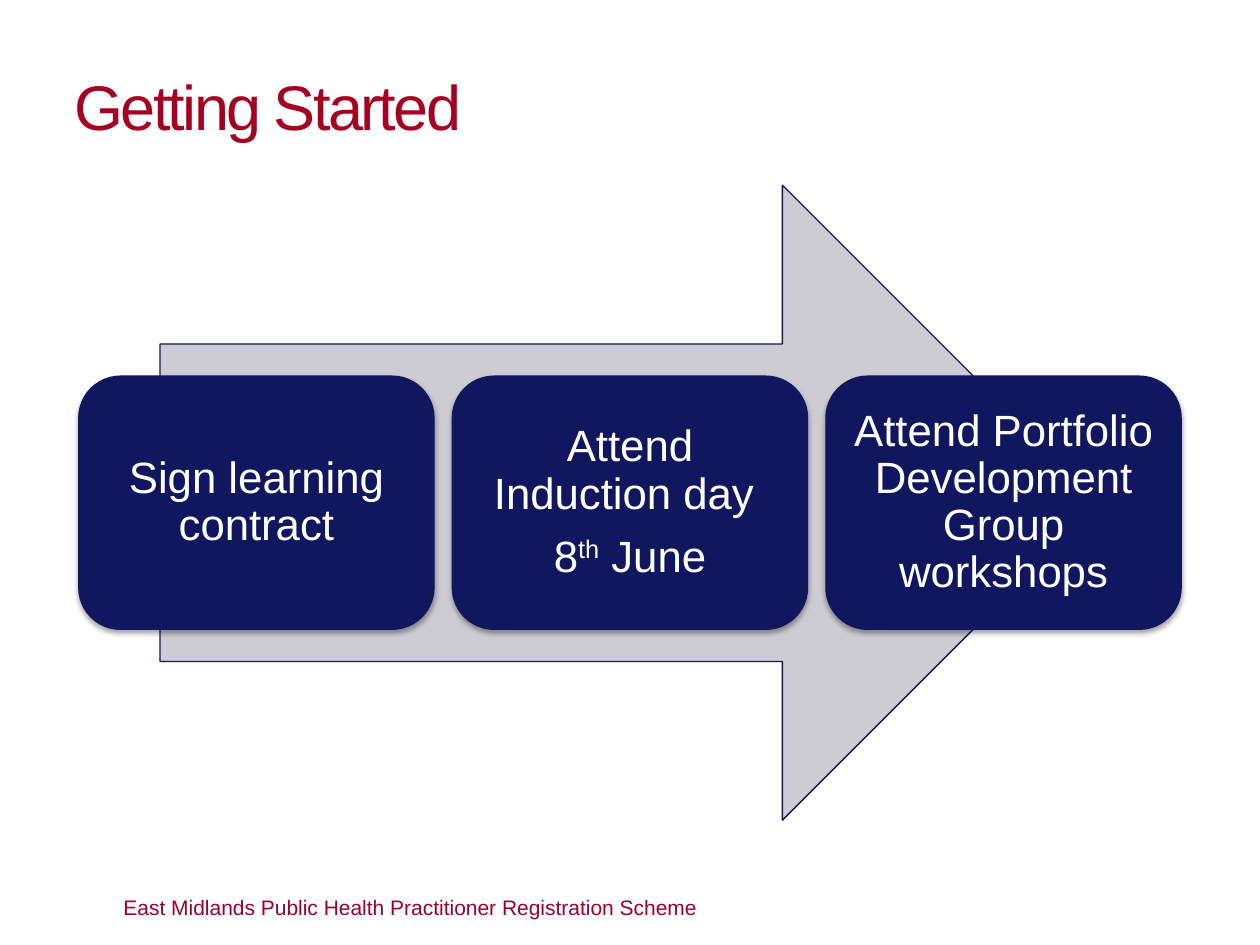
import pptx
import pptx.util
import pptx.oxml
import pptx.dml.color
import pptx.enum.shapes
import pptx.enum.text

Inches = pptx.util.Inches
Pt = pptx.util.Pt
RGBColor = pptx.dml.color.RGBColor
Shape = pptx.enum.shapes.MSO_SHAPE
Align = pptx.enum.text.PP_ALIGN
Anchor = pptx.enum.text.MSO_ANCHOR

RED = RGBColor(0xA5, 0x00, 0x21)
WINE = RGBColor(0x98, 0x00, 0x2E)
NAVY = RGBColor(0x11, 0x17, 0x5E)
GREY = RGBColor(0xCC, 0xCC, 0xD2)
WHITE = RGBColor(0xFF, 0xFF, 0xFF)

SHADOW = (
    '<a:effectLst xmlns:a="http://schemas.openxmlformats.org/drawingml/2006/main">'
    '<a:outerShdw blurRad="39370" dist="22860" dir="5400000" rotWithShape="0">'
    '<a:srgbClr val="000000"><a:alpha val="35000"/></a:srgbClr>'
    '</a:outerShdw></a:effectLst>'
)


def style(run, size, color):
    run.font.name = "Arial"
    run.font.size = Pt(size)
    run.font.color.rgb = color


def setup(frame, inset):
    frame.word_wrap = True
    frame.vertical_anchor = Anchor.MIDDLE
    frame.margin_left = frame.margin_right = Inches(inset)
    frame.margin_top = frame.margin_bottom = Inches(inset)


deck = pptx.Presentation()
deck.slide_width = Inches(10)
deck.slide_height = Inches(7.5)
slide = deck.slides.add_slide(deck.slide_layouts[5])

title = slide.shapes.title
title.left, title.top = Inches(0.59), Inches(0.52)
title.width, title.height = Inches(8.78), Inches(0.63)
title.text_frame.text = "Getting Started"
setup(title.text_frame, 0)
head = title.text_frame.paragraphs[0]
head.alignment = Align.LEFT
style(head.runs[0], 36, RED)
head.runs[0].font._element.set("spc", "-150")

arrow = slide.shapes.add_shape(
    Shape.RIGHT_ARROW, Inches(1.27), Inches(1.47), Inches(7.46), Inches(5.04))
arrow.shadow.inherit = False
arrow.fill.solid()
arrow.fill.fore_color.rgb = GREY
arrow.line.color.rgb = NAVY
arrow.line.width = Pt(0.75)

steps = [
    [["Sign learning contract"]],
    [["Attend Induction day "], ["8", "th", " June"]],
    [["Attend Portfolio Development Group workshops"]],
]
for col, step in enumerate(steps):
    box = slide.shapes.add_shape(
        Shape.ROUNDED_RECTANGLE, Inches(0.62 + col * 2.965), Inches(2.98),
        Inches(2.83), Inches(2.02))
    box.fill.solid()
    box.fill.fore_color.rgb = NAVY
    box.line.fill.background()
    box._element.spPr.append(pptx.oxml.parse_xml(SHADOW))
    frame = box.text_frame
    setup(frame, 0.1)
    for row, parts in enumerate(step):
        para = frame.add_paragraph() if row else frame.paragraphs[0]
        para.alignment = Align.CENTER
        para.line_spacing = 0.9
        para.space_after = Pt(9)
        for part in parts:
            run = para.add_run()
            run.text = part
            style(run, 25, WHITE)
            if part == "th":
                run.font._element.set("baseline", "30000")

foot = slide.shapes.add_textbox(
    Inches(0.98), Inches(6.9), Inches(8.43), Inches(0.6))
foot.text_frame.text = "East Midlands Public Health Practitioner Registration Scheme"
setup(foot.text_frame, 0)
style(foot.text_frame.paragraphs[0].runs[0], 12, WINE)

deck.save("out.pptx")
